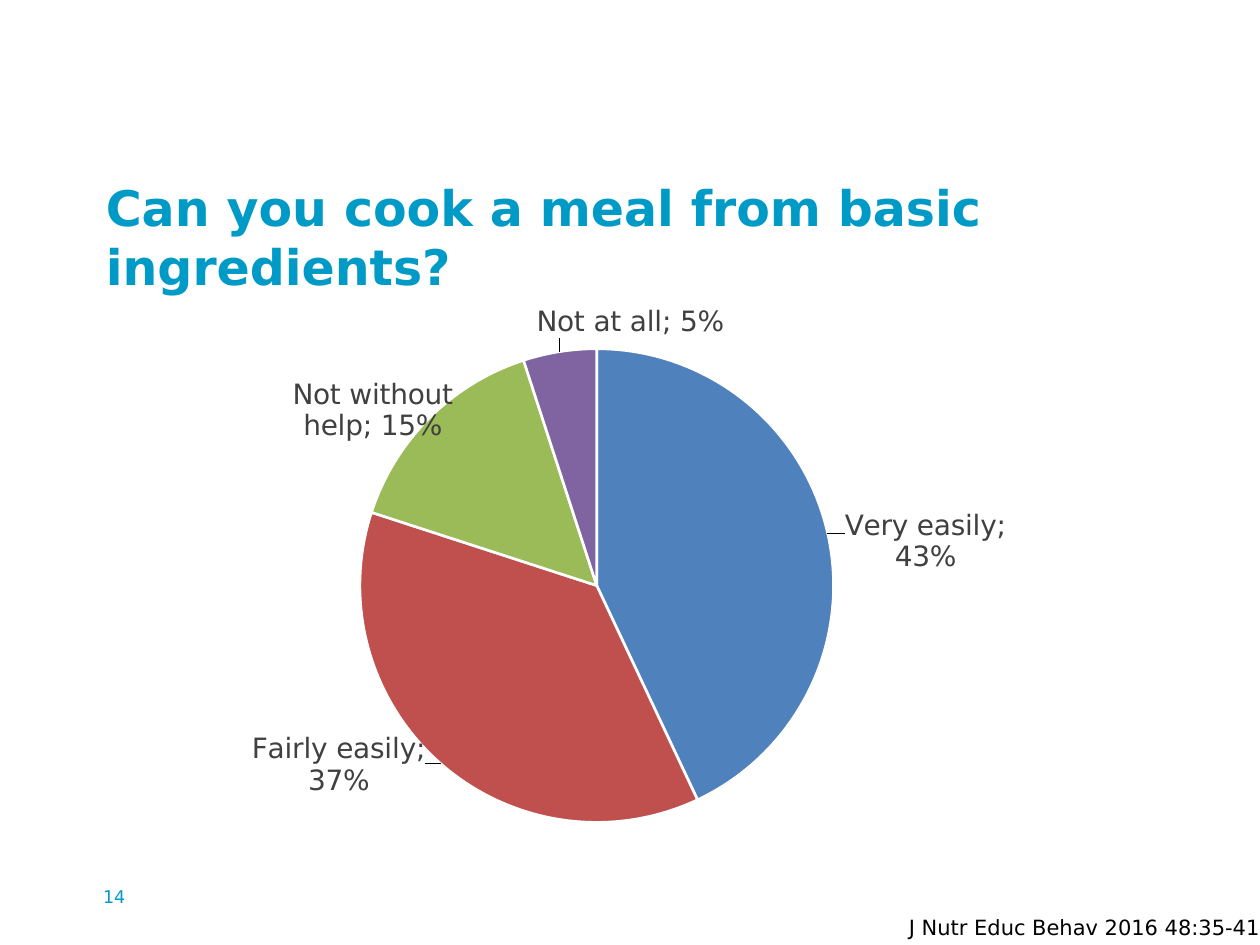
from copy import deepcopy
from dataclasses import dataclass

from lxml import etree
from pptx import Presentation
from pptx.chart.data import CategoryChartData
from pptx.dml.color import RGBColor
from pptx.enum import chart as charts, text
from pptx.oxml import ns
from pptx.util import Cm, Pt


@dataclass(frozen=True)
class Theme:
    font: str = "DejaVu Sans"
    accent: str = "009AC7"
    ink: str = "000000"
    label: str = "404040"
    gap: str = "FFFFFF"
    title_size: int = 28
    label_size: int = 16
    source_size: int = 12
    number_size: int = 10


THEME = Theme()

# answer, share, slice colour, label shift as fractions of the chart's size
ANSWERS = [
    ("Very easily", 0.43, "4F81BD", (0.01, 0.07)),
    ("Fairly easily", 0.37, "C0504D", (-0.01, -0.06)),
    ("Not without help", 0.15, "9BBB59", (0.03, 0.05)),
    ("Not at all", 0.05, "8064A2", (0.17, -0.01)),
]
PIE_AREA = {"x": 0.24, "y": 0.09, "w": 0.49, "h": 0.81}


def style_font(font, size, color, bold=False):
    font.name = THEME.font
    font.size = Pt(size)
    font.bold = bold
    font.color.rgb = RGBColor.from_string(color)


def fill_text(box, words, size, color, bold=False, align=text.PP_ALIGN.LEFT):
    frame = box.text_frame
    frame.word_wrap = True
    frame.vertical_anchor = text.MSO_ANCHOR.TOP
    frame.text = words
    para = frame.paragraphs[0]
    para.alignment = align
    style_font(para.font, size, color, bold)
    return frame


def add_title(page, words):
    title = page.shapes.title
    title.left, title.top, title.width, title.height = Cm(1.88), Cm(3.45), Cm(21.29), Cm(3.28)
    frame = fill_text(title, words, THEME.title_size, THEME.accent, bold=True)
    frame.auto_size = text.MSO_AUTO_SIZE.NONE


def chart_element(tag, value=None):
    element = etree.Element(ns.qn(f"c:{tag}"))
    if value is not None:
        element.set("val", str(value))
    return element


def manual_layout(settings):
    layout = chart_element("layout")
    manual = chart_element("manualLayout")
    layout.append(manual)
    for tag, value in settings.items():
        manual.append(chart_element(tag, value))
    return layout


def place_labels(labels_xml):
    """Separate label parts by a semicolon and shift each label from its default spot."""
    leader = labels_xml.find(ns.qn("c:showLeaderLines"))
    separator = chart_element("separator")
    separator.text = "; "
    leader.addprevious(separator)
    shared = [child for child in labels_xml if child is not leader]
    for index, (_, _, _, (x, y)) in enumerate(ANSWERS):
        label = chart_element("dLbl")
        label.append(chart_element("idx", index))
        label.append(manual_layout({"x": x, "y": y}))
        label.extend(deepcopy(child) for child in shared)
        labels_xml.insert(index, label)


def add_pie(page):
    data = CategoryChartData(number_format="0%")
    data.categories = [answer[0] for answer in ANSWERS]
    data.add_series("Series 1", [answer[1] for answer in ANSWERS])
    frame = page.shapes.add_chart(
        charts.XL_CHART_TYPE.PIE, Cm(2.51), Cm(5.97), Cm(19.63), Cm(11.79), data
    )
    chart = frame.chart
    chart.has_legend = False
    chart.has_title = False
    style_font(chart.font, THEME.label_size, THEME.ink)
    chart.plots[0].vary_by_categories = True

    series = chart.plots[0].series[0]
    for index, (_, _, color, _) in enumerate(ANSWERS):
        piece = series.points[index].format
        piece.fill.solid()
        piece.fill.fore_color.rgb = RGBColor.from_string(color)
        piece.line.color.rgb = RGBColor.from_string(THEME.gap)
        piece.line.width = Pt(1.5)

    labels = series.data_labels
    labels.show_value = True
    labels.show_category_name = True
    labels.number_format = "0%"
    labels.number_format_is_linked = False
    labels.position = charts.XL_LABEL_POSITION.OUTSIDE_END
    style_font(labels.font, THEME.label_size, THEME.label)
    place_labels(labels._element)

    plot_area = chart._chartSpace.find(".//" + ns.qn("c:plotArea"))
    for old in plot_area.findall(ns.qn("c:layout")):
        plot_area.remove(old)
    modes = {"layoutTarget": "inner", "xMode": "edge", "yMode": "edge"}
    plot_area.insert(0, manual_layout({**modes, **PIE_AREA}))


def main():
    deck = Presentation()
    deck.slide_width, deck.slide_height = Cm(25.4), Cm(19.05)
    page = deck.slides.add_slide(deck.slide_layouts[5])

    number = page.shapes.add_textbox(Cm(1.83), Cm(17.73), Cm(1.78), Cm(1.32))
    fill_text(number, "14", THEME.number_size, THEME.accent)
    add_title(page, "Can you cook a meal from basic ingredients?")
    add_pie(page)
    source = page.shapes.add_textbox(Cm(10.77), Cm(18.31), Cm(14.63), Cm(0.76))
    frame = fill_text(source, "J Nutr Educ Behav 2016 48:35-41", THEME.source_size,
                      THEME.ink, align=text.PP_ALIGN.RIGHT)
    frame.auto_size = text.MSO_AUTO_SIZE.SHAPE_TO_FIT_TEXT
    # The citation runs up to the right edge of the slide.
    frame.margin_right = 0

    deck.save("out.pptx")


if __name__ == "__main__":
    main()
